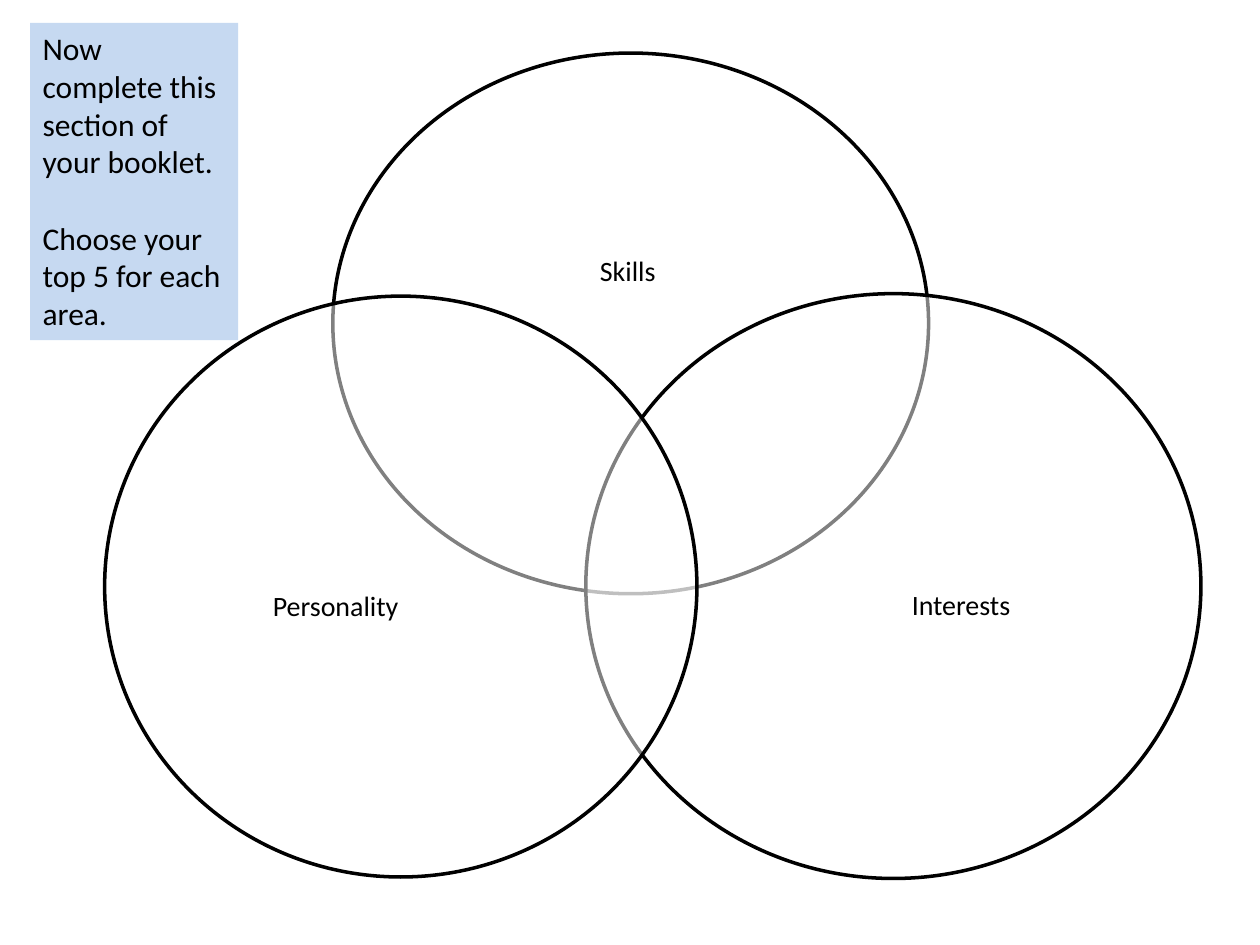
from lxml.etree import SubElement
from pptx import Presentation
from pptx.dml.color import RGBColor
from pptx.enum.shapes import MSO_SHAPE
from pptx.enum.text import MSO_ANCHOR, PP_ALIGN
from pptx.oxml.ns import qn
from pptx.util import Cm, Pt

COLORS = {"ink": "000000", "circle": "FFFFFF", "note": "C6D9F1"}
FONT = "Calibri"

# Circle boxes in cm; label boxes as fractions of their circle (left, top, width, height)
CIRCLES = [
    ("Skills", (6.71, 1.07, 12.01, 10.9), (0.13, 0.18, 0.73, 0.45)),
    ("Interests", (11.81, 5.92, 12.4, 11.79), (0.31, 0.26, 0.6, 0.55)),
    ("Personality", (2.11, 5.97, 11.94, 11.71), (0.09, 0.26, 0.6, 0.55)),
]
NOTE_BOX = (0.61, 0.46, 4.19, 6.4)
NOTE_LINES = [
    "Now complete this section of your booklet.",
    "Choose your top 5 for each area.",
]
LABEL_FRAME = {
    "margin_left": 0, "margin_right": 0, "margin_top": 0, "margin_bottom": 0,
    "vertical_anchor": MSO_ANCHOR.MIDDLE, "word_wrap": True,
}
LABEL_PARAGRAPH = {
    "alignment": PP_ALIGN.CENTER, "line_spacing": 0.9, "space_after": Pt(5.6),
}
NOTE_FRAME = {"vertical_anchor": MSO_ANCHOR.TOP, "word_wrap": True}


def color(name):
    return RGBColor.from_string(COLORS[name])


def set_attributes(target, values):
    for name, value in values.items():
        setattr(target, name, value)


def write(paragraph, text, size, paragraph_format):
    set_attributes(paragraph, paragraph_format)
    run = paragraph.add_run()
    run.text = text
    set_attributes(run.font, {"name": FONT, "size": Pt(size)})
    run.font.color.rgb = color("ink")


def add_filled_shape(shapes, kind, box, fill):
    shape = shapes.add_shape(kind, *map(Cm, box))
    shape.shadow.inherit = False
    shape.fill.solid()
    shape.fill.fore_color.rgb = color(fill)
    return shape


def add_circle(shapes, label, box, label_fractions):
    """Add a half-transparent circle with its label placed inside the box."""
    circle = add_filled_shape(shapes, MSO_SHAPE.OVAL, box, "circle")
    circle.line.color.rgb = color("ink")
    circle.line.width = Pt(2)
    fill_color = circle.fill._xPr.find(qn("a:solidFill"))[0]
    SubElement(fill_color, qn("a:alpha"), val="50000")

    left, top, width, height = box
    x, y, w, h = label_fractions
    label_box = (left + x * width, top + y * height, w * width, h * height)
    frame = shapes.add_textbox(*map(Cm, label_box)).text_frame
    set_attributes(frame, LABEL_FRAME)
    write(frame.paragraphs[0], label, 16, LABEL_PARAGRAPH)


def add_venn_diagram(slide, circles):
    group = slide.shapes.add_group_shape()
    for label, box, label_fractions in circles:
        add_circle(group.shapes, label, box, label_fractions)


def add_note(slide, box, lines):
    note = add_filled_shape(slide.shapes, MSO_SHAPE.RECTANGLE, box, "note")
    note.line.fill.background()
    frame = note.text_frame
    set_attributes(frame, NOTE_FRAME)
    for index, line in enumerate(lines):
        paragraph = frame.add_paragraph() if index else frame.paragraphs[0]
        spacing = {"alignment": PP_ALIGN.LEFT, "space_before": Pt(22 if index else 0)}
        write(paragraph, line, 18, spacing)


def main():
    presentation = Presentation()
    presentation.slide_width = Cm(25.4)
    presentation.slide_height = Cm(19.05)
    slide = presentation.slides.add_slide(presentation.slide_layouts[6])
    add_venn_diagram(slide, CIRCLES)
    add_note(slide, NOTE_BOX, NOTE_LINES)
    presentation.save("out.pptx")


if __name__ == "__main__":
    main()
